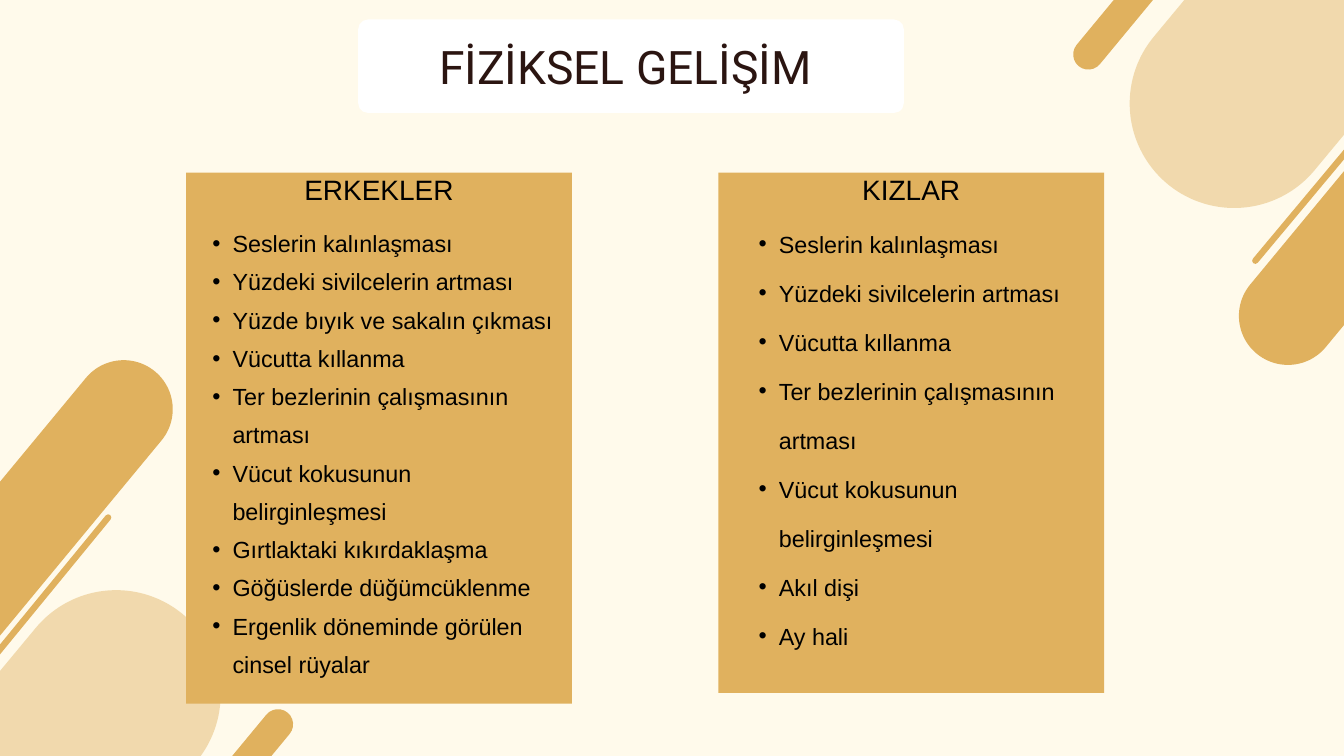
from lxml.etree import SubElement
from pptx import Presentation
from pptx.dml.color import RGBColor
from pptx.enum.shapes import MSO_CONNECTOR as Connector, MSO_SHAPE as Shape
from pptx.enum.text import MSO_ANCHOR as Anchor, MSO_AUTO_SIZE as AutoSize, PP_ALIGN as Align
from pptx.oxml.ns import qn
from pptx.util import Inches, Pt

CREAM = RGBColor(0xFF, 0xFA, 0xEB)
GOLD = RGBColor(0xE0, 0xB1, 0x5E)
WHITE = RGBColor(0xFF, 0xFF, 0xFF)
BROWN = RGBColor(0x2B, 0x15, 0x11)
BLACK = RGBColor(0, 0, 0)

TITLE_FONT = {"name": "Roboto", "size": Pt(49.5)}
HEADING_FONT = {"name": "Arial", "size": Pt(30)}
BULLET_FONT = {"name": "Arial", "size": Pt(25)}

CAPSULES = [
    ((-1.44, 8.2, 3.11, 8.16), 39.7, 44),
    ((-1, 4.6, 1.46, 8.08), 39.6, 100),
    ((3.29, 10.33, 0.45, 2.4), 39.6, 100),
    ((18.35, -4.28, 3.11, 7.93), 219.7, 44),
    ((20.02, -0.43, 1.46, 6.43), 219.6, 100),
    ((16.4, -0.61, 0.45, 1.8), 219.6, 100),
]
STRIPES = [(-2.21, 12.36, 1.61, 7.7), (22.17, -0.3, 18.68, 3.88)]

BOYS = [
    "Seslerin kalınlaşması",
    "Yüzdeki sivilcelerin artması",
    "Yüzde bıyık ve sakalın çıkması",
    "Vücutta kıllanma",
    "Ter bezlerinin çalışmasının artması",
    "Vücut kokusunun belirginleşmesi",
    "Gırtlaktaki kıkırdaklaşma",
    "Göğüslerde düğümcüklenme",
    "Ergenlik döneminde görülen cinsel rüyalar",
]
GIRLS = [
    "Seslerin kalınlaşması",
    "Yüzdeki sivilcelerin artması",
    "Vücutta kıllanma",
    "Ter bezlerinin çalışmasının artması",
    "Vücut kokusunun belirginleşmesi",
    "Akıl dişi",
    "Ay hali",
]


def add_filled_shape(slide, kind, box, color):
    shape = slide.shapes.add_shape(kind, *map(Inches, box))
    shape.shadow.inherit = False
    shape.fill.solid()
    shape.fill.fore_color.rgb = color
    shape.line.fill.background()
    return shape


def add_capsule(slide, box, rotation, opacity):
    capsule = add_filled_shape(slide, Shape.ROUND_2_SAME_RECTANGLE, box, GOLD)
    capsule.adjustments[0] = 0.5
    capsule.rotation = rotation
    if opacity < 100:
        color = capsule.element.spPr.find(qn("a:solidFill"))[0]
        SubElement(color, qn("a:alpha"), val=str(opacity * 1000))


def add_stripe(slide, ends):
    stripe = slide.shapes.add_connector(Connector.STRAIGHT, *map(Inches, ends))
    stripe.line.color.rgb = GOLD
    stripe.line.width = Pt(6.75)
    properties = stripe.element.spPr
    properties.find(qn("a:ln")).set("cap", "rnd")
    SubElement(properties, qn("a:effectLst"))


def set_frame(frame, margin, anchor):
    settings = {"word_wrap": True, "auto_size": AutoSize.NONE, "vertical_anchor": anchor}
    for side in ("left", "top", "right", "bottom"):
        settings[f"margin_{side}"] = Inches(margin)
    for name, value in settings.items():
        setattr(frame, name, value)


def write_paragraph(paragraph, text, font, color, spacing, alignment):
    paragraph.alignment = alignment
    paragraph.line_spacing = Pt(spacing)
    run = paragraph.add_run()
    run.text = text
    for name, value in font.items():
        setattr(run.font, name, value)
    run.font.color.rgb = color


def add_text_box(slide, box):
    frame = slide.shapes.add_textbox(*map(Inches, box)).text_frame
    set_frame(frame, 0, Anchor.TOP)
    return frame


def add_bullet(paragraph):
    paragraph.level = 1
    properties = paragraph._p.get_or_add_pPr()
    properties.set("marL", str(Inches(0.59)))
    properties.set("indent", str(Inches(-0.3)))
    SubElement(properties, qn("a:buFont"), typeface="Arial")
    SubElement(properties, qn("a:buChar"), char="•")


def build_title(slide, box, text):
    panel = add_filled_shape(slide, Shape.ROUNDED_RECTANGLE, box, WHITE)
    panel.adjustments[0] = 0.105
    title = slide.shapes.title
    title.left, title.top, title.width, title.height = map(Inches, box)
    set_frame(title.text_frame, 0.06, Anchor.MIDDLE)
    write_paragraph(title.text_frame.paragraphs[0], text, TITLE_FONT, BROWN, 59.4, Align.CENTER)
    panel.element.addnext(title.element)


def build_card(slide, box, heading, items, list_offset, list_width, spacing):
    left, top, width, height = box
    add_filled_shape(slide, Shape.RECTANGLE, box, GOLD)
    heading_frame = add_text_box(slide, (left, top - 0.09, width, 0.58))
    write_paragraph(heading_frame.paragraphs[0], heading, HEADING_FONT, BLACK, 42, Align.CENTER)
    offset_x, offset_y = list_offset
    frame = add_text_box(slide, (left + offset_x, top + offset_y, list_width, height - 1.2))
    for index, item in enumerate(items):
        paragraph = frame.add_paragraph() if index else frame.paragraphs[0]
        write_paragraph(paragraph, item, BULLET_FONT, BLACK, spacing, Align.LEFT)
        add_bullet(paragraph)


def main():
    presentation = Presentation()
    presentation.slide_width = Inches(20)
    presentation.slide_height = Inches(11.25)
    slide = presentation.slides.add_slide(presentation.slide_layouts[5])
    slide.background.fill.solid()
    slide.background.fill.fore_color.rgb = CREAM

    for box, rotation, opacity in CAPSULES:
        add_capsule(slide, box, rotation, opacity)
    for ends in STRIPES:
        add_stripe(slide, ends)
    build_title(slide, (5.33, 0.29, 8.12, 1.39), "FİZİKSEL GELİŞİM ")
    build_card(slide, (2.77, 2.57, 5.74, 7.9), "ERKEKLER", BOYS, (0.1, 0.69), 5.62, 41)
    build_card(slide, (10.69, 2.57, 5.74, 7.74), "KIZLAR", GIRLS, (0.31, 0.54), 4.88, 52.5)

    presentation.save("out.pptx")


if __name__ == "__main__":
    main()
